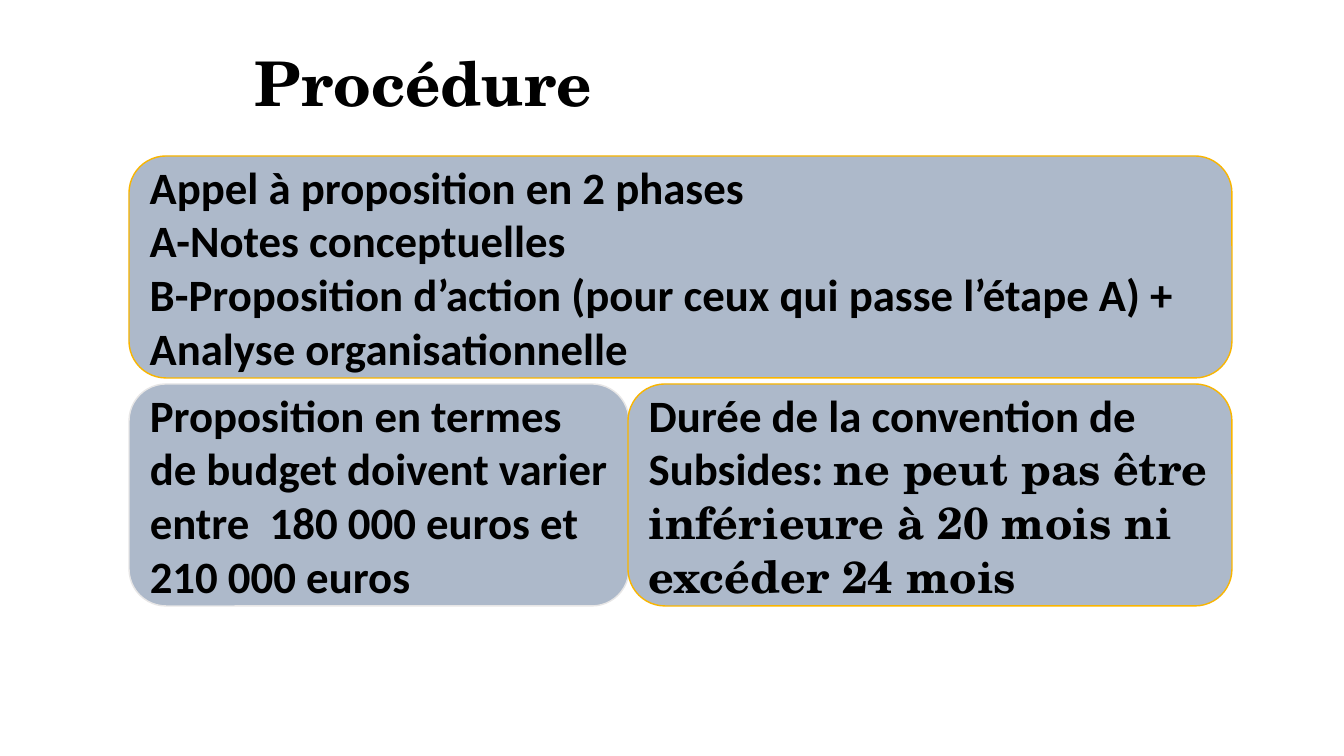
import pptx
import pptx.dml.color
import pptx.enum.shapes
import pptx.enum.text
import pptx.util

PX = 914400 / 100.8
SERIF = "TeX Gyre Schola"
SANS = "Calibri"
GOLD = "F9B500"
GREY = "E7E6E6"


def color(value):
    return pptx.dml.color.RGBColor.from_string(value)


def add_bold_run(paragraph, text, font_name, size):
    run = paragraph.add_run()
    run.text = text
    run.font.name = font_name
    run.font.size = pptx.util.Pt(size)
    run.font.bold = True
    run.font.color.rgb = color("000000")


presentation = pptx.Presentation()
presentation.slide_width = round(1344 * PX)
presentation.slide_height = round(756 * PX)
slide = presentation.slides.add_slide(presentation.slide_layouts[6])

title = slide.shapes.add_textbox(*(round(n * PX) for n in (245, 40, 823, 159)))
title.text_frame.word_wrap = True
add_bold_run(title.text_frame.paragraphs[0], "Procédure", SERIF, 44)

# Each box: left, top, width, line colour, paragraphs of (text, font) runs
BOX_HEIGHT = 222
boxes = [
    (129, 156, 1103, GOLD, [
        [("Appel à proposition en 2 phases", SANS)],
        [("A-Notes conceptuelles", SANS)],
        [("B-Proposition d’action (pour ceux qui passe l’étape A) + Analyse organisationnelle", SANS)],
    ]),
    (129, 384, 500, GREY, [
        [("Proposition en termes de budget doivent varier entre  180 000 euros et 210 000 euros", SANS)],
    ]),
    (628, 384, 604, GOLD, [
        [("Durée de la convention de Subsides: ", SANS),
         ("ne peut pas être inférieure à 20 mois ni excéder 24 mois", SERIF)],
    ]),
]

for left, top, width, line_color, paragraphs in boxes:
    shape = slide.shapes.add_shape(
        pptx.enum.shapes.MSO_SHAPE.ROUNDED_RECTANGLE,
        *(round(n * PX) for n in (left, top, width, BOX_HEIGHT)))
    shape.shadow.inherit = False
    shape.fill.solid()
    shape.fill.fore_color.rgb = color("ADB9CA")
    shape.line.color.rgb = color(line_color)
    shape.line.width = pptx.util.Pt(1)

    text_frame = shape.text_frame
    text_frame.word_wrap = True
    text_frame.vertical_anchor = pptx.enum.text.MSO_ANCHOR.MIDDLE
    for index, runs in enumerate(paragraphs):
        paragraph = text_frame.add_paragraph() if index else text_frame.paragraphs[0]
        paragraph.alignment = pptx.enum.text.PP_ALIGN.LEFT
        for text, font_name in runs:
            add_bold_run(paragraph, text, font_name, 32)

presentation.save("out.pptx")
